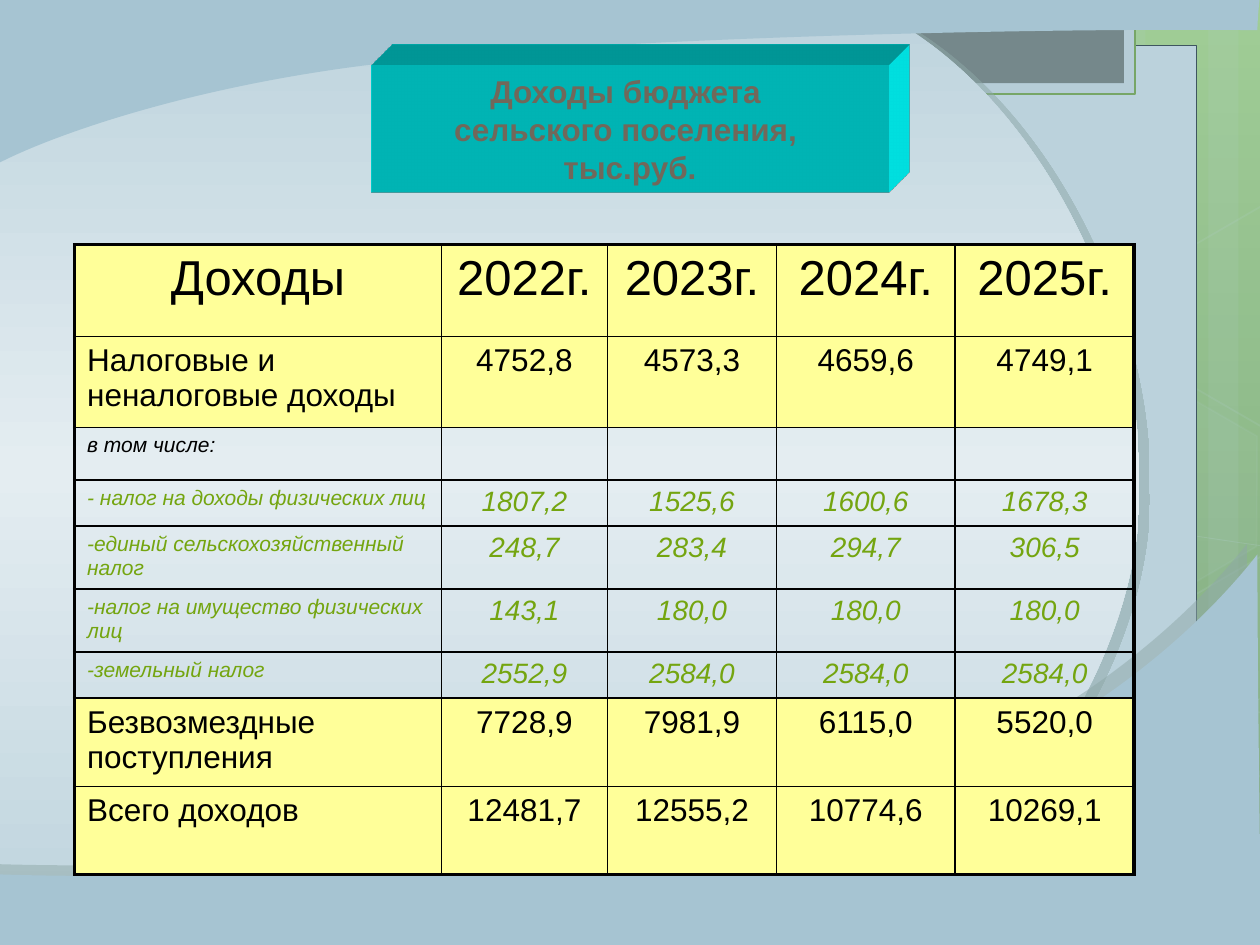
from dataclasses import dataclass
from math import cos, radians, sin
from lxml.etree import SubElement as Sub
from pptx import Presentation
from pptx.dml.color import RGBColor as Rgb
from pptx.enum.shapes import MSO_SHAPE as Kind
from pptx.enum.text import MSO_ANCHOR as Anchor, PP_ALIGN as Align
from pptx.oxml.ns import qn
from pptx.util import Inches, Pt


@dataclass(frozen=True)
class Theme:
    font: str = "Arial"
    black: str = "000000"
    white: str = "FFFFFF"
    green: str = "74A510"
    brown: str = "71685A"
    pale: str = "F5F5F5"
    haze: str = "7AA8BC"
    wave: str = "A6C4D2"
    shade: str = "8EA8A7"
    cream: str = "FFFF99"
    cyan: str = "00FFFF"
    back: tuple = ((0, "C2F35F"), (62, "92BE3F"), (100, "80A33D"))
    disc: tuple = ((0, "BDD3DD"), (50, "E4EDF1"), (100, "BDD3DD"))
    head: int = 28
    text: int = 18
    figure: int = 16
    note: int = 12
    thin: float = 1
    thick: float = 2.25


THEME = Theme()
COLS, ROWS = 100, 75
CELL = Inches(0.1)
TILT = 30

STRIPS = [(10.9, 17.5), (0.9, 5), (3.4, 8.3), (15.5, 17.5), (5.5, 5), (8, 8.3),
          (73.4, 17.5), (95.9, 5), (90, 8.3), (42.5, 30.8), (32.5, 5), (35, 8.3)]
ARCS = [
    [(0.7, 67.3), (6.1, 67.6, 11.5, 67.9, 19, 67.8), (26.5, 67.7, 35.8, 67.5, 45.8, 66.5),
     (55.8, 65.5, 70, 63.6, 79.2, 61.7), (88.3, 59.8, 97.7, 56.8, 100.7, 55.1)],
    [(0.7, 47.7), (3.6, 46.1, 6.5, 44.6, 12.1, 43.1), (17.8, 41.6, 25.9, 39.4, 34.7, 38.7),
     (43.6, 38, 54.4, 37.9, 65.4, 38.7), (76.4, 39.5, 94.7, 42.6, 100.7, 43.4)],
    [(0.6, 61.7), (12.7, 67.2, 24.7, 72.7, 33.5, 74.9)],
    [(0.7, 57.8), (3.8, 58.9, 7, 60, 12.8, 61.6), (18.6, 63.1, 27.3, 65.6, 35.7, 67.3),
     (44, 69, 54.5, 70.8, 62.8, 71.8), (71.1, 72.9, 80, 73.3, 85.3, 73.6),
     (90.6, 74, 91.9, 73.8, 94.5, 73.8), (97.1, 73.7, 98.9, 73.5, 100.7, 73.4)],
    [(24.2, 74.9), (26, 72.9, 27.8, 70.9, 30.2, 69.1), (32.6, 67.2, 36, 65.3, 38.8, 63.9),
     (41.6, 62.5, 43.3, 61.9, 46.9, 60.9), (50.6, 59.9, 57.3, 58.5, 60.8, 57.8),
     (64.4, 57.1, 64.9, 57.1, 68, 56.9), (71.1, 56.6, 76, 56.3, 79.4, 56.2),
     (82.9, 56.1, 88.6, 56.2, 88.6, 56.2), (95.3, 56.2),
     (97.1, 56.3, 98.8, 56.4, 99.7, 56.5), (100.6, 56.6, 100.3, 56.5, 100.6, 56.6)],
]
HEXES = [(33.4, 3.6, 4, 8), (49.7, 58.9, 6, 12), (1.1, 59.1, 0, 12), (1.4, 31.2, 7, 8),
         (17.4, 59.2, 0, 12), (75.3, 45.3, 10, 12), (83.4, 59.3, 0, 12), (83.4, 31.4, 7, 8)]
SHARDS = [
    (3.6, 53.6, 10, [(0.8, 44.5), (1.9, 43.8), (9.6, 48.3), (9.5, 57), (2, 61.4), (0.9, 60.7)]),
    (98.5, 52, 4, [(92.6, 48.5), (100.2, 44.1), (100.9, 44.6), (100.9, 61.3),
                   (100.2, 61.7), (92.6, 57.3)]),
    (98.5, 24.1, 0, [(92.6, 20.7), (100.2, 16.3), (101, 16.8), (100.9, 33.5),
                     (100.2, 33.9), (92.6, 29.5)]),
]
DISC = [(67.8, 0), (82.9, 6.4, 90.8, 25.9, 90.4, 38.3),
        (91, 50.9, 80.8, 68.6, 65.7, 74.7), (-0.3, 74.8), (-0.4, -0.3)]
FLOOR = [(99.8, 44), (95.6, 49.4, 85.2, 59.7, 68.4, 64.1),
         (51.6, 68.4, 17.6, 70, -0.1, 69.4), (-0.1, 71.7, -0.4, 76.2, -0.4, 75.7),
         (-0.4, 75.7, 49.3, 75, 100.1, 75.3), (99.9, 60.5, 99.8, 50.5, 99.8, 44)]
ROOF = [(-0.4, 13.1), (3.7, 10.9, 15.6, 6.5, 32.4, 4.8),
        (49.2, 3, 82, 2.2, 99.8, 2.4), (99.8, 1.4, 100, -0.4, 100, -0.2),
        (100, -0.2, 50.4, -0.2, -0.4, -0.3), (-0.2, 5.8, -0.5, 10.4, -0.4, 13.1)]

HEADS = ["Доходы", "2022г.", "2023г.", "2024г.", "2025г."]
DATA = [
    ("main", 7.2, "Налоговые и неналоговые доходы", "4752,8 4573,3 4659,6 4749,1"),
    ("intro", 4.2, "в том числе:", ""),
    ("part", 3.65, "- налог на доходы физических лиц", "1807,2 1525,6 1600,6 1678,3"),
    ("part", 5, "-единый сельскохозяйственный налог", "248,7 283,4 294,7 306,5"),
    ("part", 5, "-налог на имущество физических лиц", "143,1 180,0 180,0 180,0"),
    ("part", 3.65, "-земельный налог", "2552,9 2584,0 2584,0 2584,0"),
    ("main", 7, "Безвозмездные поступления", "7728,9 7981,9 6115,0 5520,0"),
    ("main", 7, "Всего доходов", "12481,7 12555,2 10774,6 10269,1"),
]
WIDTHS = [29.1, 13.2, 13.4, 14.2, 14.2]


def grid(*units):
    return [round(u * CELL) for u in units]


def blend(fill, root, stops):
    fill.gradient()
    fill.gradient_angle = 270
    items = root.find(".//" + qn("a:gsLst"))
    items.clear()
    for spot, color in stops:
        stop = Sub(items, qn("a:gs"), pos=str(spot * 1000))
        Sub(stop, qn("a:srgbClr"), val=color)


def fade(shape, where, share):
    color = shape.element.spPr.find(where + qn("a:solidFill") + "/" + qn("a:srgbClr"))
    Sub(color, qn("a:alpha"), val=str(share * 1000))


def paint(shape, fill=None, alpha=100, line=None, width=1, clear=100):
    shape.shadow.inherit = False
    if fill and alpha:
        shape.fill.solid()
        shape.fill.fore_color.rgb = Rgb.from_string(fill)
        if alpha < 100:
            fade(shape, "", alpha)
    else:
        shape.fill.background()
    if line:
        shape.line.color.rgb = Rgb.from_string(line)
        shape.line.width = Pt(width)
        if clear < 100:
            fade(shape, qn("a:ln") + "/", clear)
    else:
        shape.line.fill.background()
    return shape


def block(slide, box, kind=Kind.RECTANGLE, **look):
    return paint(slide.shapes.add_shape(kind, *grid(*box)), **look)


def outline(slide, route, close=True, **look):
    ends = [grid(*leg[-2:]) for leg in route]
    pen = slide.shapes.build_freeform(*ends[0], scale=1.0)
    pen.add_line_segments(ends[1:], close=close)
    shape = pen.convert_to_shape()
    for node, leg in zip(list(shape.element.iter(qn("a:lnTo"))), route[1:]):
        if len(leg) == 6:
            node.clear()
            node.tag = qn("a:cubicBezTo")
            for x, y in zip(grid(*leg[::2]), grid(*leg[1::2])):
                Sub(node, qn("a:pt"), x=str(x - shape.left), y=str(y - shape.top))
    return paint(shape, **look)


def spin(route, mid_x, mid_y):
    c, s = cos(radians(TILT)), sin(radians(TILT))
    gaps = [(x - mid_x, y - mid_y) for x, y in route]
    return [(mid_x + x * c + y * s, mid_y - x * s + y * c) for x, y in gaps]


def shadow(shape, gap, turn):
    box = shape.element.spPr.find(qn("a:effectLst"))
    cast = Sub(box, qn("a:outerShdw"), blurRad="0", dist=str(Pt(gap)),
               dir=str(turn * 60000), algn="ctr", rotWithShape="0")
    Sub(Sub(cast, qn("a:srgbClr"), val=THEME.shade), qn("a:alpha"), val="50000")


def scene(slide):
    white = THEME.white
    blend(slide.background.fill, slide.element, THEME.back)
    for left, wide in STRIPS:
        block(slide, (left, 0, wide, ROWS), fill=white, alpha=10)
    for arc in ARCS:
        outline(slide, arc, False, line=white, width=0.5, clear=20)
    for left, top, alpha, clear in HEXES:
        hexa = block(slide, (left, top, 17.5, 15.2), Kind.HEXAGON,
                     fill=white, alpha=alpha, line=white, clear=clear)
        hexa.adjustments[0] = 0.285
        hexa.rotation = TILT
    for x, y, alpha, route in SHARDS:
        shard = outline(slide, spin(route, x, y), fill=white, alpha=alpha, line=white, clear=12)
        shard.rotation = TILT
    block(slide, (5, 3.6, 90, 67.7), fill=white, line=THEME.black, width=0.5)
    block(slide, (49.9, -0.2, 40.2, 7.7), fill=THEME.pale, line=THEME.green, width=1.25)
    block(slide, (50.9, -0.2, 38.3, 6.8), fill=THEME.brown)
    block(slide, (0, 0, COLS, ROWS), fill=THEME.haze, alpha=51)
    disc = outline(slide, DISC)
    blend(disc.fill, disc.element, THEME.disc)
    shadow(disc, 6.3, 18)
    shadow(outline(slide, FLOOR, fill=THEME.wave), 8.5, 225)
    outline(slide, ROOF, fill=THEME.wave)


def write(para, text, size, color, align, bold=False, italic=False):
    para.alignment = align
    run = para.add_run()
    run.text = text
    font = run.font
    font.name, font.size, font.bold, font.italic = THEME.font, Pt(size), bold, italic
    font.color.rgb = Rgb.from_string(color)


def extrude(shape):
    props = shape.element.spPr
    view = Sub(props, qn("a:scene3d"))
    Sub(view, qn("a:camera"), prst="legacyObliqueTopRight")
    Sub(view, qn("a:lightRig"), rig="legacyFlat3", dir="b")
    solid = Sub(props, qn("a:sp3d"), extrusionH="430200", prstMaterial="legacyMatte")
    for side in ("a:bevelT", "a:bevelB"):
        Sub(solid, qn(side), w="13500", h="13500", prst="angle")
    Sub(Sub(solid, qn("a:extrusionClr")), qn("a:srgbClr"), val=THEME.cyan)


def banner(slide):
    box = (29.5, 5.2, 41, 10.1)
    extrude(block(slide, box, fill=THEME.cyan))
    title = slide.shapes.title
    title.element.getparent().append(title.element)
    title.left, title.top, title.width, title.height = grid(*box)
    frame = title.text_frame
    frame.word_wrap = True
    frame.vertical_anchor = Anchor.MIDDLE
    for i, line in enumerate(("Доходы бюджета ", "сельского поселения, ", "тыс.руб.")):
        para = frame.add_paragraph() if i else frame.paragraphs[0]
        write(para, line, THEME.text, THEME.brown, Align.CENTER, bold=True)


def border(cell, sides):
    props = cell._tc.get_or_add_tcPr()
    for i, (side, width) in enumerate(sides.items()):
        line = Sub(props, qn("a:ln" + side), w=str(Pt(width)))
        Sub(Sub(line, qn("a:solidFill")), qn("a:srgbClr"), val=THEME.black)
        props.insert(i, line)


def budget(slide):
    rows = [("head", 7.3, HEADS)]
    rows += [(kind, high, [name] + (nums.split() or [""] * 4)) for kind, high, name, nums in DATA]
    looks = {"head": (THEME.head, THEME.head, THEME.black),
             "main": (THEME.text, THEME.text, THEME.black),
             "intro": (THEME.note, THEME.note, THEME.black),
             "part": (THEME.note, THEME.figure, THEME.green)}
    box = grid(5.92, 19.42, sum(WIDTHS), sum(row[1] for row in rows))
    table = slide.shapes.add_table(len(rows), len(WIDTHS), *box).table
    table.first_row = table.horz_banding = False
    for col, wide in zip(table.columns, WIDTHS):
        col.width = grid(wide)[0]
    for r, (kind, high, words) in enumerate(rows):
        table.rows[r].height = grid(high)[0]
        first, rest, color = looks[kind]
        for c, word in enumerate(words):
            cell = table.cell(r, c)
            if kind in ("head", "main"):
                cell.fill.solid()
                cell.fill.fore_color.rgb = Rgb.from_string(THEME.cream)
            else:
                cell.fill.background()
            if word:
                align = Align.CENTER if c or kind == "head" else Align.LEFT
                write(cell.text_frame.paragraphs[0], word, rest if c else first,
                      color, align, italic=kind in ("intro", "part"))
            ends = {"L": c == 0, "R": c == len(WIDTHS) - 1, "T": r == 0, "B": r == len(rows) - 1}
            border(cell, {s: THEME.thick if end else THEME.thin for s, end in ends.items()})


def main():
    deck = Presentation()
    deck.slide_width, deck.slide_height = grid(COLS, ROWS)
    slide = deck.slides.add_slide(deck.slide_layouts[5])
    scene(slide)
    banner(slide)
    budget(slide)
    deck.save("out.pptx")


if __name__ == "__main__":
    main()
